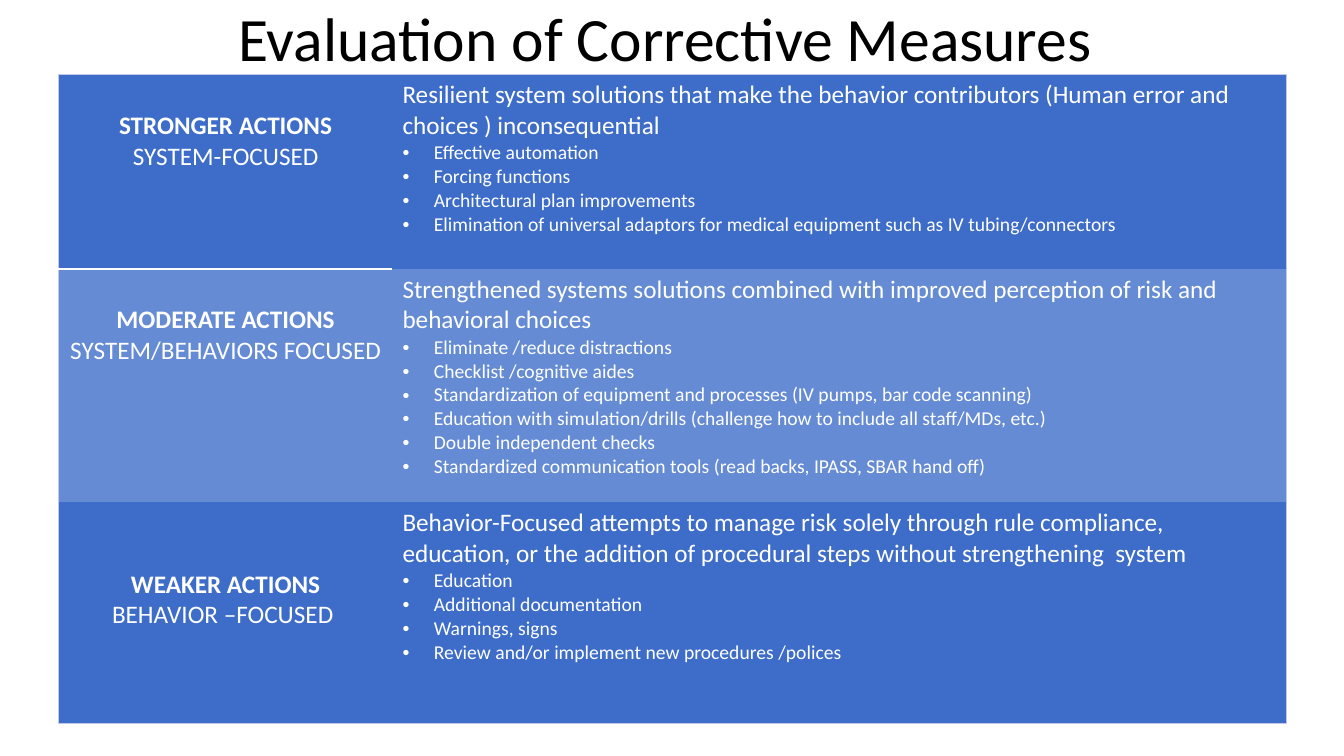
"""Build a slide that ranks corrective measures from stronger to weaker."""
from lxml.etree import SubElement
from pptx import Presentation
from pptx.dml.color import RGBColor
from pptx.enum.text import MSO_ANCHOR, PP_ALIGN
from pptx.oxml.ns import qn
from pptx.util import Cm, Pt

TITLE = "Evaluation of Corrective Measures "
LEVELS = [
    {
        "name": "STRONGER ACTIONS",
        "focus": "SYSTEM-FOCUSED",
        "summary": "Resilient system solutions that make the behavior contributors "
                   "(Human error and choices ) inconsequential",
        "measures": [
            "Effective automation",
            "Forcing functions",
            "Architectural plan improvements",
            "Elimination of universal adaptors for medical equipment such as IV tubing/connectors",
        ],
        "height": 4.9, "label_top": 0.9, "fill": "3D6DC8",
    },
    {
        "name": "MODERATE ACTIONS",
        "focus": "SYSTEM/BEHAVIORS FOCUSED",
        "summary": "Strengthened systems solutions combined with improved perception "
                   "of risk and behavioral choices",
        "measures": [
            "Eliminate /reduce distractions",
            "Checklist /cognitive aides",
            "Standardization of equipment and processes (IV pumps, bar code scanning)",
            "Education with simulation/drills (challenge how to include all staff/MDs, etc.)",
            "Double independent checks",
            "Standardized communication tools (read backs, IPASS, SBAR hand off)",
        ],
        "height": 5.88, "label_top": 0.9, "fill": "648BD3",
    },
    {
        "name": "WEAKER ACTIONS",
        "focus": "BEHAVIOR –FOCUSED ",
        "summary": "Behavior-Focused attempts to manage risk solely through rule compliance, "
                   "education, or the addition of procedural steps without strengthening  system",
        "measures": [
            "Education",
            "Additional documentation",
            "Warnings, signs",
            "Review and/or implement new procedures /polices",
        ],
        "height": 5.57, "label_top": 1.68, "fill": "3D6DC8",
    },
]
COLUMN_WIDTHS = [8.41, 22.53]
OUTER_EDGE = ("C1C9E4", 0.5)
DIVIDER = ("FFFFFF", 1.5)
NO_STYLE = "{2D5ABB26-0587-4C30-8999-92F81FD0307C}"


def color(value):
    return RGBColor.from_string(value)


def add_text(frame, text, size=18, fill="FFFFFF", bold=False, align=PP_ALIGN.LEFT,
             bullet=False, spacing=None):
    paragraph = frame.paragraphs[0]
    if paragraph.runs:
        paragraph = frame.add_paragraph()
    paragraph.alignment = align
    paragraph.line_spacing = spacing
    if bullet:
        properties = paragraph._p.get_or_add_pPr()
        properties.set("marL", str(Cm(0.79)))
        properties.set("indent", str(-Cm(0.79)))
        SubElement(properties, qn("a:buFont"), typeface="Arial")
        SubElement(properties, qn("a:buChar"), char="•")
    run = paragraph.add_run()
    run.text = text
    run.font.name = "Calibri"
    run.font.size = Pt(size)
    run.font.bold = bold
    run.font.color.rgb = color(fill)


def add_borders(cell, edges):
    properties = cell._tc.get_or_add_tcPr()
    for side in "LRTB":
        if side in edges:
            value, width = edges[side]
            line = SubElement(properties, qn(f"a:ln{side}"), w=str(Pt(width)))
            solid = SubElement(line, qn("a:solidFill"))
            SubElement(solid, qn("a:srgbClr"), val=value)


def add_title(slide):
    box = slide.shapes.add_textbox(Cm(2.57), Cm(0), Cm(28.75), Cm(2.08))
    frame = box.text_frame
    frame.word_wrap = True
    frame.vertical_anchor = MSO_ANCHOR.MIDDLE
    add_text(frame, TITLE, size=44, fill="000000", align=PP_ALIGN.CENTER, spacing=0.9)


def add_levels(slide):
    total_height = sum(level["height"] for level in LEVELS)
    frame = slide.shapes.add_table(len(LEVELS), len(COLUMN_WIDTHS), Cm(1.48), Cm(1.88),
                                   Cm(sum(COLUMN_WIDTHS)), Cm(total_height))
    table = frame.table
    table._tbl.tblPr.find(qn("a:tableStyleId")).text = NO_STYLE
    table.first_row = table.horz_banding = False
    for column, width in zip(table.columns, COLUMN_WIDTHS):
        column.width = Cm(width)
    for index, level in enumerate(LEVELS):
        table.rows[index].height = Cm(level["height"])
        label, details = table.cell(index, 0), table.cell(index, 1)
        shared = {}
        if index == 0:
            shared["T"] = OUTER_EDGE
        if index == len(LEVELS) - 1:
            shared["B"] = OUTER_EDGE
        label_edges = {**shared, "L": OUTER_EDGE}
        if index == 0:
            label_edges["B"] = DIVIDER
        add_borders(label, label_edges)
        add_borders(details, {**shared, "R": OUTER_EDGE})
        for cell in (label, details):
            cell.fill.solid()
            cell.fill.fore_color.rgb = color(level["fill"])
        label.margin_top = Cm(level["label_top"])
        add_text(label.text_frame, level["name"], bold=True, align=PP_ALIGN.CENTER)
        add_text(label.text_frame, level["focus"], align=PP_ALIGN.CENTER)
        add_text(details.text_frame, level["summary"])
        for measure in level["measures"]:
            add_text(details.text_frame, measure, size=14, bullet=True)


def main():
    presentation = Presentation()
    presentation.slide_width = Cm(33.87)
    presentation.slide_height = Cm(19.05)
    slide = presentation.slides.add_slide(presentation.slide_layouts[6])
    add_title(slide)
    add_levels(slide)
    presentation.save("out.pptx")


if __name__ == "__main__":
    main()
